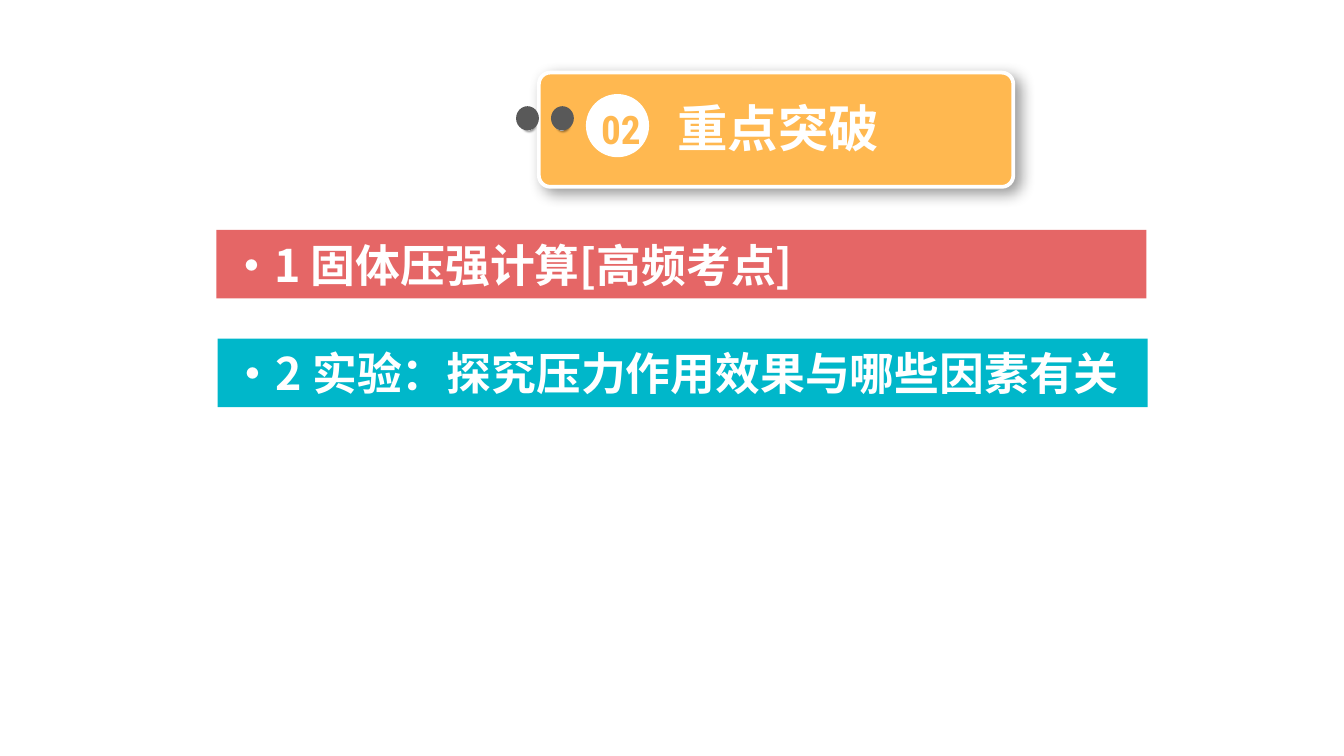
from lxml.etree import SubElement
from pptx import Presentation
from pptx.dml.color import RGBColor
from pptx.enum.shapes import MSO_SHAPE
from pptx.enum.text import MSO_ANCHOR, PP_ALIGN
from pptx.oxml import parse_xml
from pptx.oxml.ns import nsdecls, qn
from pptx.util import Inches, Pt

THEME = {
    "white": "FFFFFF", "amber": "FFB850", "red": "E56666", "teal": "00B7CA",
    "pin": "595959", "shadow": "000000",
    "metal": [(0, "FFFFFF"), (17, "A6A6A6"), (35, "F2F2F2"),
              (55, "A6A6A6"), (75, "F2F2F2"), (100, "A6A6A6")],
    "cjk": "Noto Sans CJK SC", "latin": "Roboto Condensed",
    "title": 27, "number": 21, "topic": 24,
}
TITLE = "重点突破"
NUMBER = "02"
TOPICS = [
    ("·1 固体压强计算[高频考点]", "red", 1.61),
    ("·2 实验：探究压力作用效果与哪些因素有关", "teal", 1.62),
]
TOPIC_TOP, TOPIC_STEP = 1.71, 0.81
PINS = [(4.13, 4.1), (3.88, 3.84)]


def color(name):
    return RGBColor.from_string(THEME[name])


def add_shape(shapes, kind, box, fill=None):
    sp = shapes.add_shape(kind, *map(Inches, box))
    sp.shadow.inherit = False
    sp.line.fill.background()
    if fill:
        sp.fill.solid()
        sp.fill.fore_color.rgb = color(fill)
    return sp


def add_shadow(sp, blur, dist):
    effects = sp._element.spPr.find(qn("a:effectLst"))
    shadow = SubElement(effects, qn("a:outerShdw"), blurRad=str(Pt(blur)),
                        dist=str(Pt(dist)), dir="2700000", algn="tl", rotWithShape="0")
    clr = SubElement(shadow, qn("a:srgbClr"), val=THEME["shadow"])
    SubElement(clr, qn("a:alpha"), val="40000")


def fill_metal(sp):
    stops = "".join(f'<a:gs pos="{pos * 1000}"><a:srgbClr val="{rgb}"/></a:gs>'
                    for pos, rgb in THEME["metal"])
    grad = parse_xml(f'<a:gradFill {nsdecls("a")}><a:gsLst>{stops}</a:gsLst>'
                     '<a:lin ang="2700000" scaled="0"/></a:gradFill>')
    sp._element.spPr.find(qn("a:prstGeom")).addnext(grad)


def write(sp, text, size, font, ink, align):
    tf = sp.text_frame
    tf.text = text
    tf.word_wrap = True
    tf.vertical_anchor = MSO_ANCHOR.MIDDLE
    p = tf.paragraphs[0]
    p.alignment = align
    r = p.runs[0]
    r.font.size = Pt(THEME[size])
    r.font.name = THEME[font]
    r.font.bold = True
    r.font.color.rgb = color(ink)
    SubElement(r._r.get_or_add_rPr(), qn("a:ea"), typeface=THEME[font])


def add_header(s):
    shapes = s.shapes.add_group_shape().shapes
    card = add_shape(shapes, MSO_SHAPE.ROUNDED_RECTANGLE, (4.01, 0.54, 3.53, 0.85), "amber")
    card.adjustments[0] = 0.1
    card.line.color.rgb = color("white")
    card.line.width = Pt(2)
    add_shadow(card, 8, 4)
    for ring_left, pin_left in PINS:
        ring = add_shape(shapes, MSO_SHAPE.OVAL, (ring_left, 0.87, 0.1, 0.1))
        ring.rotation = 270
        fill_metal(ring)
        add_shadow(ring, 1, 1)
        add_shape(shapes, MSO_SHAPE.OVAL, (pin_left, 0.79, 0.17, 0.18), "pin")
    title = shapes.add_textbox(*map(Inches, (4.55, 0.67, 2.48, 0.56)))
    write(title, TITLE, "title", "cjk", "white", PP_ALIGN.CENTER)
    add_shape(shapes, MSO_SHAPE.OVAL, (4.36, 0.7, 0.47, 0.47), "white")
    number = shapes.add_textbox(*map(Inches, (4.34, 0.73, 0.56, 0.45)))
    write(number, NUMBER, "number", "latin", "amber", PP_ALIGN.CENTER)


def main():
    prs = Presentation()
    prs.slide_width = Inches(10)
    prs.slide_height = prs.slide_width * 9 // 16
    s = prs.slides.add_slide(prs.slide_layouts[6])
    add_header(s)
    for i, (text, fill, left) in enumerate(TOPICS):
        box = (left, TOPIC_TOP + i * TOPIC_STEP, 6.92, 0.51)
        bar = add_shape(s.shapes, MSO_SHAPE.RECTANGLE, box, fill)
        write(bar, text, "topic", "cjk", "white", PP_ALIGN.LEFT)
    prs.save("out.pptx")


if __name__ == "__main__":
    main()
